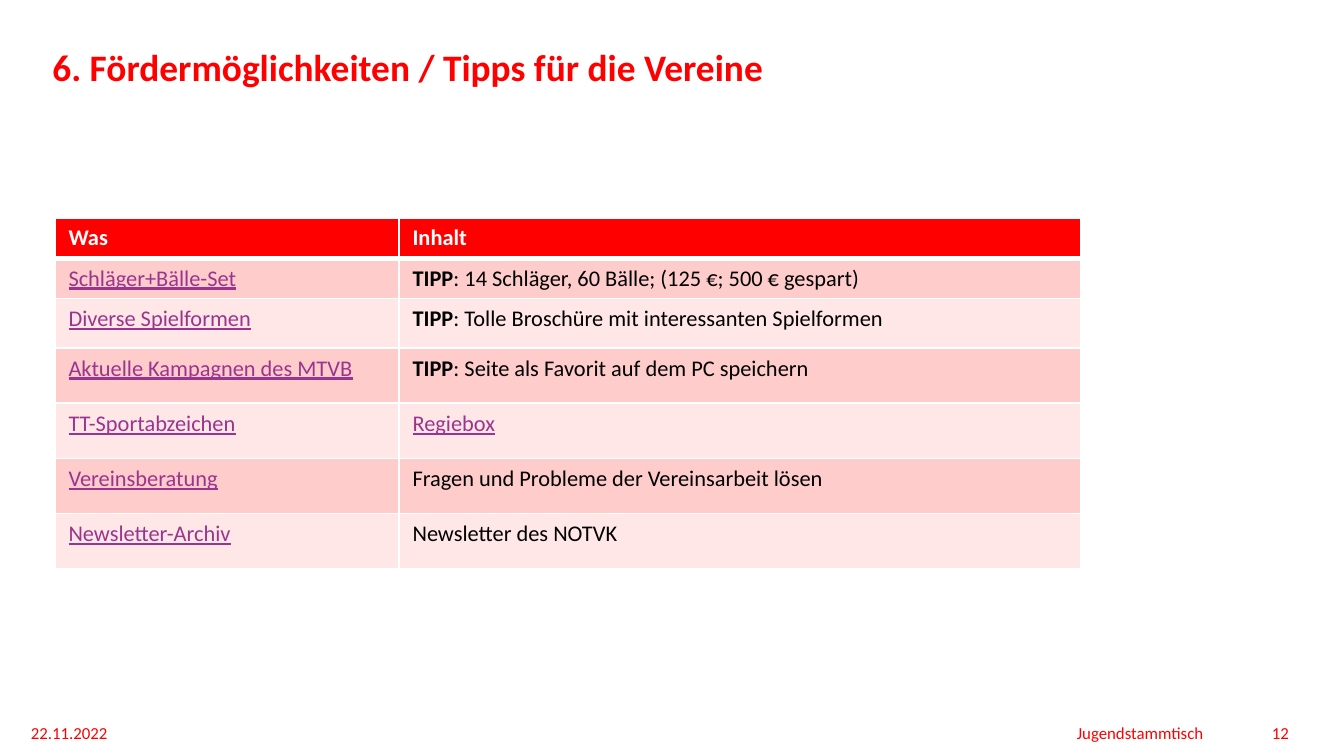
from dataclasses import dataclass

from lxml import etree
from pptx import Presentation
from pptx.dml.color import RGBColor
from pptx.enum import text
from pptx.oxml import ns
from pptx.util import Inches, Pt


@dataclass(frozen=True)
class Theme:
    font: str = "Calibri"
    red: str = "FF0000"
    white: str = "FFFFFF"
    black: str = "000000"
    link: str = "9B348E"
    bands: tuple = ("FFCCCC", "FFE7E7")
    title_size: int = 20
    table_size: int = 12
    footer_size: int = 9


THEME = Theme()
SLIDE_WIDTH = 10
COLUMN_WIDTHS = (2.56, 5.07)
ROW_HEIGHTS = (0.3, 0.3, 0.37, 0.41, 0.41, 0.41, 0.41)
HEADERS = ("Was", "Inhalt")
TIPS = (
    ("Schläger+Bälle-Set", "TIPP", ": 14 Schläger, 60 Bälle; (125 €; 500 € gespart)"),
    ("Diverse Spielformen", "TIPP", ": Tolle Broschüre mit interessanten Spielformen"),
    ("Aktuelle Kampagnen des MTVB", "TIPP", ": Seite als Favorit auf dem PC speichern"),
    ("TT-Sportabzeichen", "Regiebox", " "),
    ("Vereinsberatung", "", "Fragen und Probleme der Vereinsarbeit lösen"),
    ("Newsletter-Archiv", "", "Newsletter des NOTVK"),
)


def format_run(run, size, color, bold=False, underline=False):
    font = run.font
    font.name = THEME.font
    font.size = Pt(size)
    font.bold = bold
    font.underline = underline
    font.color.rgb = RGBColor.from_string(color)


def add_text(slide, content, box, size, insets=(0, 0, 0, 0), align=text.PP_ALIGN.LEFT,
             bold=False, line_spacing=None):
    frame = slide.shapes.add_textbox(*map(Inches, box)).text_frame
    frame.word_wrap = True
    frame.vertical_anchor = text.MSO_ANCHOR.TOP
    (frame.margin_left, frame.margin_top,
     frame.margin_right, frame.margin_bottom) = map(Inches, insets)
    frame.text = content
    paragraph = frame.paragraphs[0]
    paragraph.alignment = align
    paragraph.line_spacing = line_spacing
    format_run(paragraph.runs[0], size, THEME.red, bold)


def set_borders(cell, widths):
    properties = cell._tc.get_or_add_tcPr()
    for index, (side, width) in enumerate(zip("LRTB", widths)):
        line = etree.Element(ns.qn(f"a:ln{side}"), w=str(int(Pt(width))))
        fill = etree.SubElement(line, ns.qn("a:solidFill"))
        etree.SubElement(fill, ns.qn("a:srgbClr"), val=THEME.white)
        properties.insert(index, line)


def fill_cell(cell, color, parts, widths):
    cell.fill.solid()
    cell.fill.fore_color.rgb = RGBColor.from_string(color)
    set_borders(cell, widths)
    paragraph = cell.text_frame.paragraphs[0]
    for content, style in parts:
        run = paragraph.add_run()
        run.text = content
        format_run(run, THEME.table_size, **style)


def add_tips_table(slide):
    table = slide.shapes.add_table(
        len(ROW_HEIGHTS), len(COLUMN_WIDTHS), Inches(0.41), Inches(1.62),
        Inches(sum(COLUMN_WIDTHS)), Inches(sum(ROW_HEIGHTS))).table
    for column, width in zip(table.columns, COLUMN_WIDTHS):
        column.width = Inches(width)
    for row, height in zip(table.rows, ROW_HEIGHTS):
        row.height = Inches(height)

    header = {"color": THEME.white, "bold": True}
    strong = {"color": THEME.black, "bold": True}
    plain = {"color": THEME.black}
    link = {"color": THEME.link, "underline": True}
    for column, label in enumerate(HEADERS):
        fill_cell(table.cell(0, column), THEME.red, [(label, header)], (1, 1, 1, 3))
    for row, (topic, lead, detail) in enumerate(TIPS, start=1):
        band = THEME.bands[(row - 1) % 2]
        widths = (1, 1, 3 if row == 1 else 1, 1)
        lead_style = strong if lead == "TIPP" else link
        content = [(lead, lead_style)] if lead else []
        fill_cell(table.cell(row, 0), band, [(topic, link)], widths)
        fill_cell(table.cell(row, 1), band, content + [(detail, plain)], widths)


def add_footer(slide):
    right = text.PP_ALIGN.RIGHT
    size = THEME.footer_size
    add_text(slide, "22.11.2022", (0.23, 5.38, 0.88, 0.12), size)
    add_text(slide, "Jugendstammtisch ", (4.99, 5.38, 3.99, 0.12), size, align=right)
    add_text(slide, "12", (9.13, 5.38, 0.46, 0.12), size, (0.12, 0, 0, 0), right)


def main():
    presentation = Presentation()
    presentation.slide_width = Inches(SLIDE_WIDTH)
    presentation.slide_height = Inches(SLIDE_WIDTH * 9 / 16)
    slide = presentation.slides.add_slide(presentation.slide_layouts[6])
    add_text(slide, "6. Fördermöglichkeiten / Tipps für die Vereine", (0, 0, 10, 1.06),
             THEME.title_size, (0.39, 0.39, 0.39, 0), bold=True, line_spacing=0.95)
    add_footer(slide)
    add_tips_table(slide)
    presentation.save("out.pptx")


if __name__ == "__main__":
    main()
